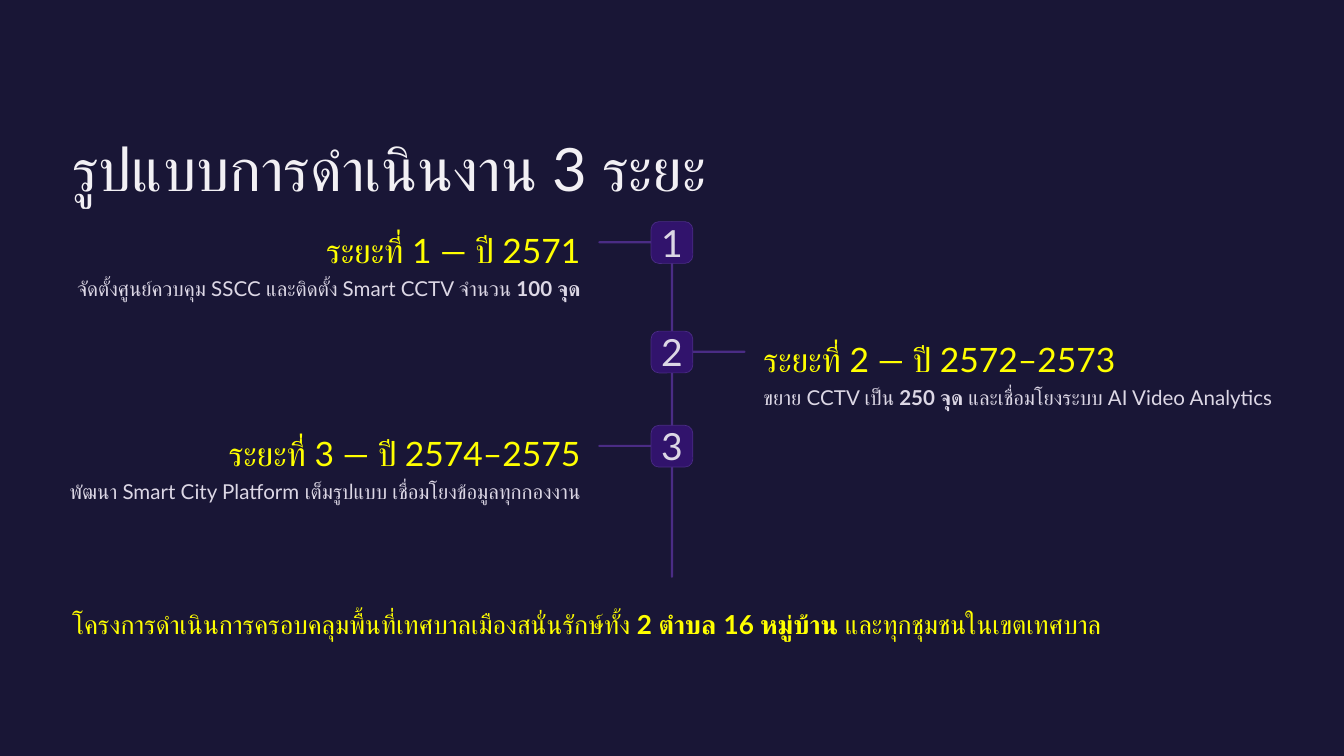
from dataclasses import dataclass

from lxml import etree
from pptx import Presentation
from pptx import util as u
from pptx.dml.color import RGBColor
from pptx.enum import shapes, text
from pptx.oxml import ns
from pptx.slide import Slide


@dataclass(frozen=True)
class Theme:
    font: str = "Lato"
    paper: str = "FFFFFF"
    night: str = "0D0A2C"
    night_opacity: int = 95
    violet: str = "31136C"
    rail: str = "4A2C85"
    white: str = "F2F0F4"
    lilac: str = "DCD7E5"
    yellow: str = "FFFF00"
    title: int = 32
    number: int = 20
    heading: int = 18
    closing: int = 14
    detail: int = 11


@dataclass(frozen=True)
class Box:
    left: float
    top: float
    width: float
    height: float

    def lengths(self) -> tuple[u.Cm, ...]:
        return tuple(u.Cm(v) for v in (self.left, self.top, self.width, self.height))


@dataclass(frozen=True)
class Span:
    words: str
    bold: bool = False


@dataclass(frozen=True)
class Phase:
    number: str
    top: float
    on_left: bool
    heading: str
    detail: tuple[Span, ...]


THEME = Theme()
PAGE = Box(0, 0, 25.4, 14.29)
AXIS = 12.7
MARGIN = 1.37
BADGE = 0.79
RAIL = 0.04
BRANCH = 1.04
TEXT_GAP = 1.73
HEADING_WIDTH = 6.8
DETAIL_WIDTH = 9.75

LEFT = text.PP_ALIGN.LEFT
RIGHT = text.PP_ALIGN.RIGHT
CENTER = text.PP_ALIGN.CENTER

PHASES = (
    Phase("1", 4.19, True, "ระยะที่ 1 — ปี 2571",
          (Span("จัดตั้งศูนย์ควบคุม SSCC และติดตั้ง Smart CCTV จำนวน "),
           Span("100 จุด", True))),
    Phase("2", 6.26, False, "ระยะที่ 2 — ปี 2572–2573",
          (Span("ขยาย CCTV เป็น "), Span("250 จุด", True),
           Span(" และเชื่อมโยงระบบ AI Video Analytics"))),
    Phase("3", 8.04, True, "ระยะที่ 3 — ปี 2574–2575",
          (Span("พัฒนา Smart City Platform เต็มรูปแบบ เชื่อมโยงข้อมูลทุกกองงาน"),)),
)
CLOSING = (
    Span("โครงการดำเนินการครอบคลุมพื้นที่เทศบาลเมืองสนั่นรักษ์ทั้ง "),
    Span("2 ตำบล 16 หมู่บ้าน", True),
    Span(" และทุกชุมชนในเขตเทศบาล"),
)


def color(code: str) -> RGBColor:
    return RGBColor.from_string(code)


def write(slide: Slide, box: Box, spans: tuple[Span, ...], size: int, ink: str,
          align: text.PP_ALIGN = LEFT, spacing: float = 1.0,
          anchor: text.MSO_ANCHOR = text.MSO_ANCHOR.TOP) -> None:
    frame = slide.shapes.add_textbox(*box.lengths()).text_frame
    frame.margin_left = frame.margin_right = frame.margin_top = frame.margin_bottom = 0
    frame.word_wrap = False
    frame.vertical_anchor = anchor
    paragraph = frame.paragraphs[0]
    paragraph.alignment = align
    paragraph.line_spacing = spacing
    for span in spans:
        run = paragraph.add_run()
        run.text = span.words
        run.font.name = THEME.font
        run.font.size = u.Pt(size)
        run.font.bold = span.bold
        run.font.color.rgb = color(ink)


def draw_backdrop(slide: Slide) -> None:
    slide.background.fill.solid()
    slide.background.fill.fore_color.rgb = color(THEME.paper)
    veil = slide.shapes.add_shape(shapes.MSO_SHAPE.RECTANGLE, *PAGE.lengths())
    veil.shadow.inherit = False
    veil.line.fill.background()
    veil.fill.solid()
    veil.fill.fore_color.rgb = color(THEME.night)
    tint = veil.fill._xPr.find(ns.qn("a:solidFill"))[0]
    etree.SubElement(tint, ns.qn("a:alpha")).set("val", str(THEME.night_opacity * 1000))


def draw_block(slide: Slide, box: Box, fill: str, rounding: float,
               outline: str | None = None) -> None:
    block = slide.shapes.add_shape(shapes.MSO_SHAPE.ROUNDED_RECTANGLE, *box.lengths())
    block.shadow.inherit = False
    block.adjustments[0] = rounding
    block.fill.solid()
    block.fill.fore_color.rgb = color(fill)
    if outline:
        block.line.color.rgb = color(outline)
        block.line.width = u.Pt(0.38)
    else:
        block.line.fill.background()


def draw_rail(slide: Slide, box: Box) -> None:
    draw_block(slide, box, THEME.rail, 0.5)


def draw_phase(slide: Slide, phase: Phase) -> None:
    def beside(gap: float, width: float) -> float:
        return AXIS - gap - width if phase.on_left else AXIS + gap

    top = phase.top
    align = RIGHT if phase.on_left else LEFT
    draw_rail(slide, Box(beside(0.35, BRANCH), top + 0.37, BRANCH, RAIL))
    draw_block(slide, Box(AXIS - BADGE / 2, top, BADGE, BADGE),
               THEME.violet, 0.19, THEME.rail)
    write(slide, Box(AXIS - 0.25, top + 0.07, 0.5, 0.64), (Span(phase.number),),
          THEME.number, THEME.lilac, CENTER, anchor=text.MSO_ANCHOR.MIDDLE)
    write(slide, Box(beside(TEXT_GAP, HEADING_WIDTH), top + 0.12, HEADING_WIDTH, 0.53),
          (Span(phase.heading),), THEME.heading, THEME.yellow, align, 1.04)
    write(slide, Box(beside(TEXT_GAP, DETAIL_WIDTH), top + 0.87, DETAIL_WIDTH, 0.56),
          phase.detail, THEME.detail, THEME.lilac, align, 1.33)


def main() -> None:
    deck = Presentation()
    deck.slide_width, deck.slide_height = u.Cm(PAGE.width), u.Cm(PAGE.height)
    slide = deck.slides.add_slide(deck.slide_layouts[6])

    draw_backdrop(slide)
    write(slide, Box(MARGIN, 2.44, 12.3, 1.07), (Span("รูปแบบการดำเนินงาน 3 ระยะ"),),
          THEME.title, THEME.white, spacing=1.04)
    draw_rail(slide, Box(AXIS - RAIL / 2, PHASES[0].top, RAIL, 6.73))
    for phase in PHASES:
        draw_phase(slide, phase)
    write(slide, Box(MARGIN, 11.3, 23.9, 1.32), CLOSING,
          THEME.closing, THEME.yellow, spacing=1.33)

    deck.save("out.pptx")


if __name__ == "__main__":
    main()
